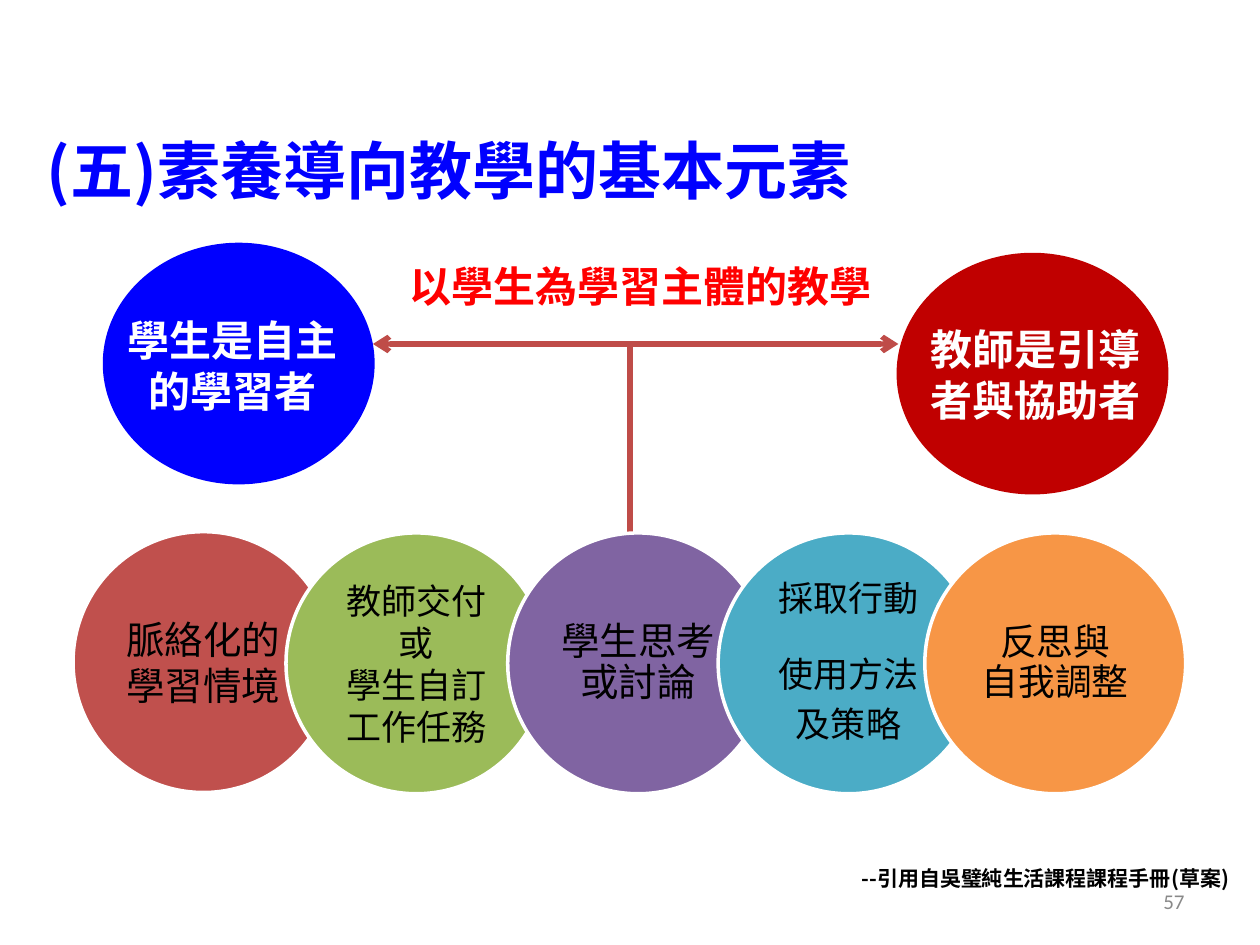
from lxml.etree import SubElement
from pptx import Presentation
from pptx.dml.color import RGBColor
from pptx.enum.shapes import MSO_CONNECTOR, MSO_SHAPE
from pptx.enum.text import MSO_ANCHOR, MSO_AUTO_SIZE, PP_ALIGN
from pptx.oxml.ns import qn
from pptx.util import Inches, Pt

HUES = {
    "blue": "0000FF", "crimson": "C00000", "red": "FF0000", "line": "BF4C48",
    "brick": "C0504D", "green": "9BBB59", "purple": "8064A2", "teal": "4BACC6",
    "orange": "F79646", "white": "FFFFFF", "black": "000000", "gray": "898989",
}
CJK = "Noto Sans CJK SC"
SIDE = 2.07
STEPS = [
    (0.58, 4.22, "brick", 22, ["脈絡化的", "學習情境"], 1, [0, 0]),
    (2.27, 4.23, "green", 20, ["教師交付或\n學生自訂", "工作任務"], 1, [0, 0]),
    (4.03, 4.23, "purple", 22, ["學生思考或討論"], 0.9, [0]),
    (5.70, 4.23, "teal", 20, ["採取行動", "使用方法", "及策略"], 0.9, [21.5, 7, 0]),
    (7.34, 4.23, "orange", 21, ["反思與\n自我調整"], 0.9, [0]),
]


def color(name):
    """Return the named colour."""
    return RGBColor.from_string(HUES[name])


def write(frame, lines, size, hue, bold=False, align=PP_ALIGN.LEFT, font=CJK):
    """Fill a text frame with evenly styled paragraphs."""
    frame.word_wrap = True
    frame.text = "\n".join("" for _ in lines)
    for para, line in zip(frame.paragraphs, lines):
        para.text = line
        para.alignment = align
        for run in para.runs:
            run.font.size = Pt(size)
            run.font.bold = bold
            run.font.name = font
            run.font.color.rgb = color(hue)
            east = SubElement(run.font._element, qn("a:ea"))
            east.set("typeface", font)


def label(slide, box, text, size, hue, **style):
    """Add a text box with one paragraph."""
    shape = slide.shapes.add_textbox(*map(Inches, box))
    write(shape.text_frame, [text], size, hue, **style)
    return shape


def oval(slide, box, fill, edge):
    """Add a filled ellipse."""
    shape = slide.shapes.add_shape(MSO_SHAPE.OVAL, *map(Inches, box))
    shape.shadow.inherit = False
    shape.fill.solid()
    shape.fill.fore_color.rgb = color(fill)
    shape.line.color.rgb = color(edge)
    shape.line.width = Pt(2)
    return shape


def link(slide, ends, arrows=False):
    """Add a straight line, with arrowheads at both ends if asked."""
    line = slide.shapes.add_connector(MSO_CONNECTOR.STRAIGHT, *map(Inches, ends))
    line.line.color.rgb = color("line")
    line.line.width = Pt(3)
    if arrows:
        for tag in ("a:headEnd", "a:tailEnd"):
            SubElement(line.line._get_or_add_ln(), qn(tag)).set("type", "arrow")
    SubElement(line._element.spPr, qn("a:effectLst"))


def heading(slide, box):
    """Place and style the title."""
    title = slide.shapes.title
    title.left, title.top, title.width, title.height = map(Inches, box)
    frame = title.text_frame
    write(frame, ["(五)素養導向教學的基本元素"], 36, "blue", bold=True)
    frame.auto_size = MSO_AUTO_SIZE.NONE
    frame.vertical_anchor = MSO_ANCHOR.TOP


def roles(slide, box):
    """Draw the student and teacher ovals and the lines between them."""
    left, top, width, height = box
    mid = top + 0.79
    wide, tall = 2.13, 1.89
    right = left + width - wide
    link(slide, (5, mid, 5, top + height))
    oval(slide, (left, top, wide, tall), "blue", "blue")
    oval(slide, (right, top + 0.08, wide, tall), "crimson", "crimson")
    label(slide, (left + 0.07, top + 0.51, 1.89, 0.91), "學生是自主的學習者",
          24, "white", bold=True, align=PP_ALIGN.CENTER)
    label(slide, (right + 0.16, top + 0.58, 1.97, 1.31), "教師是引導者與協助者",
          24, "white", bold=True)
    label(slide, (3.11, top + 0.08, 3.94, 0.51), "以學生為學習主體的教學",
          24, "red", bold=True, align=PP_ALIGN.CENTER)
    link(slide, (left + wide, mid, right, mid), arrows=True)


def step(slide, box, fill, size, lines, pitch, gaps):
    """Draw one circle of the chain with its text."""
    frame = oval(slide, box, fill, "white").text_frame
    frame.margin_left = frame.margin_right = Inches(0.11)
    frame.margin_top = frame.margin_bottom = Inches(0.03)
    frame.vertical_anchor = MSO_ANCHOR.MIDDLE
    write(frame, lines, size, "black", align=PP_ALIGN.CENTER)
    for para, gap in zip(frame.paragraphs, gaps):
        para.line_spacing = float(pitch)
        para.space_after = Pt(gap)


def footer(slide, box):
    """Add the source note and the page number."""
    left, top, width, height = box
    label(slide, (left, top, width, 0.3), "--引用自吳璧純生活課程課程手冊(草案)",
          12, "black", bold=True)
    page = label(slide, (left + 0.43, top + height - 0.4, 2.33, 0.4), "57",
                 12, "gray", align=PP_ALIGN.RIGHT, font="Calibri")
    page.text_frame.vertical_anchor = MSO_ANCHOR.MIDDLE


def main():
    """Build and save the slide."""
    deck = Presentation()
    deck.slide_width, deck.slide_height = Inches(10), Inches(7.5)
    slide = deck.slides.add_slide(deck.slide_layouts[5])
    heading(slide, (0.27, 0.99, 8.2, 0.8))
    roles(slide, (0.83, 1.94, 8.43, 2.28))
    for left, top, *rest in STEPS:
        step(slide, (left, top, SIDE, SIDE), *rest)
    footer(slide, (6.74, 6.82, 3.14, 0.53))
    deck.save("out.pptx")


if __name__ == "__main__":
    main()
